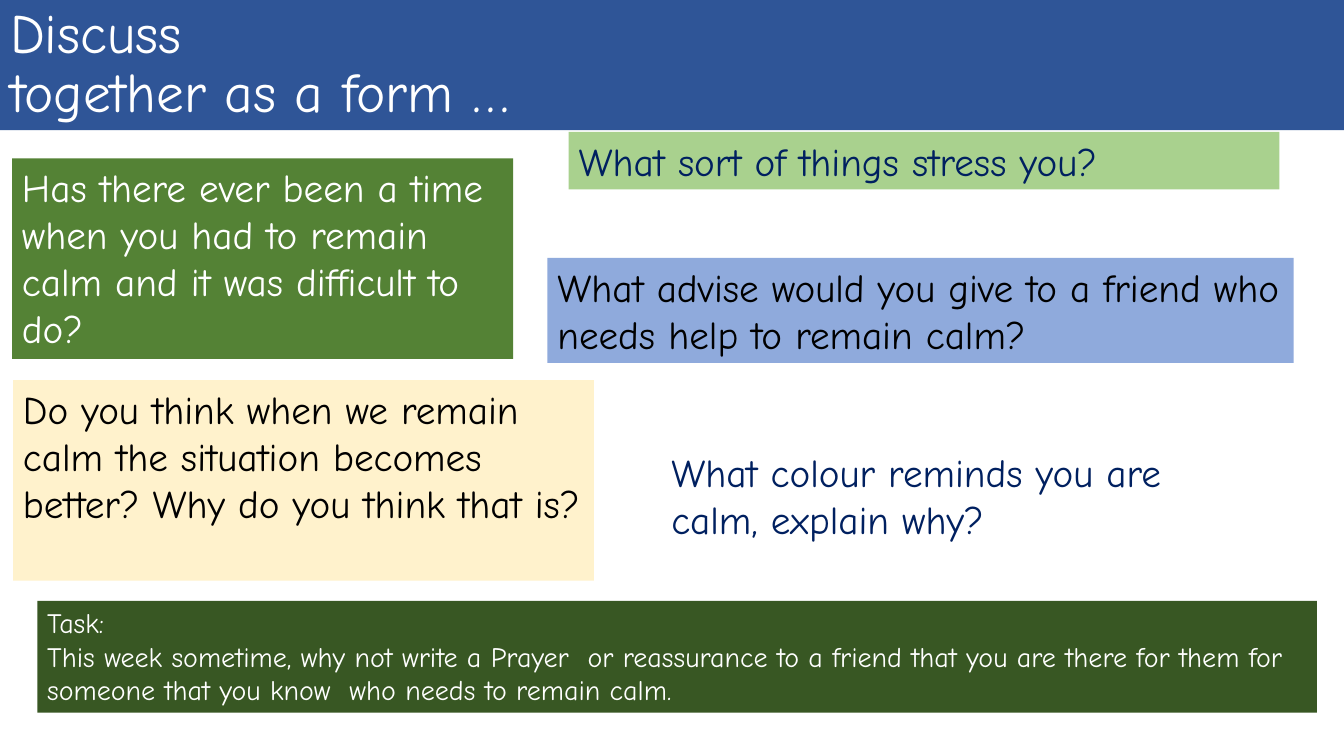
from pptx import Presentation
from pptx.dml.color import RGBColor
from pptx.enum.text import MSO_ANCHOR, MSO_AUTO_SIZE, PP_ALIGN
from pptx.util import Inches, Pt

LEFT = PP_ALIGN.LEFT
TOP, MIDDLE = MSO_ANCHOR.TOP, MSO_ANCHOR.MIDDLE
NO_AUTOFIT = MSO_AUTO_SIZE.NONE
FONT = "Comic Neue"
WHITE, BLACK, NAVY = "FFFFFF", "000000", "002060"


def rgb(value):
    return RGBColor.from_string(value)


def write_panel(panel, box, text, size, color, fill=None, anchor=TOP, spacing=1.0):
    """Place a panel, colour it and fill it with left-aligned text."""
    for side, length in zip(("left", "top", "width", "height"), box):
        setattr(panel, side, Inches(length))
    if fill:
        panel.fill.solid()
        panel.fill.fore_color.rgb = rgb(fill)
    frame = panel.text_frame
    frame.text = text
    frame_format = {"word_wrap": True, "auto_size": NO_AUTOFIT, "vertical_anchor": anchor}
    for name, value in frame_format.items():
        setattr(frame, name, value)
    for paragraph in frame.paragraphs:
        paragraph.alignment = LEFT
        paragraph.line_spacing = spacing
        for run in paragraph.runs:
            run.font.name = FONT
            run.font.size = Pt(size)
            run.font.color.rgb = rgb(color)


prs = Presentation()
prs.slide_width = Inches(13.33)
prs.slide_height = Inches(7.5)
slide = prs.slides.add_slide(prs.slide_layouts.get_by_name("Title Only"))

write_panel(slide.shapes.title, (0, 0, 13.33, 1.29),
            "Discuss\vtogether as a form …", 39.6, WHITE, "2F5597", MIDDLE, 0.9)

# Box, text, text size, text colour, fill
panels = [
    ((0.37, 5.96, 12.69, 1.11),
     "Task:\nThis week sometime, why not write a Prayer  or reassurance to a friend "
     "that you are there for them for someone that you know  who needs to remain calm.",
     20, WHITE, "385723"),
    ((0.13, 3.77, 5.76, 1.99),
     "Do you think when we remain calm the situation becomes better? "
     "Why do you think that is?", 28, BLACK, "FFF2CC"),
    ((0.12, 1.57, 4.97, 1.99),
     "Has there ever been a time when you had to remain calm and it was difficult to do?",
     28, WHITE, "548235"),
    ((5.64, 1.31, 7.05, 0.57), "What sort of things stress you?", 28, NAVY, "A9D18E"),
    ((5.43, 2.56, 7.4, 1.04),
     "What advise would you give to a friend who needs help to remain calm?",
     28, BLACK, "8FAADC"),
    ((6.56, 4.4, 5.88, 1.04),
     "What colour reminds you are calm, explain why?", 28, NAVY, None),
]
for box, text, size, color, fill in panels:
    panel = slide.shapes.add_textbox(*map(Inches, box))
    write_panel(panel, box, text, size, color, fill)

prs.save("out.pptx")
